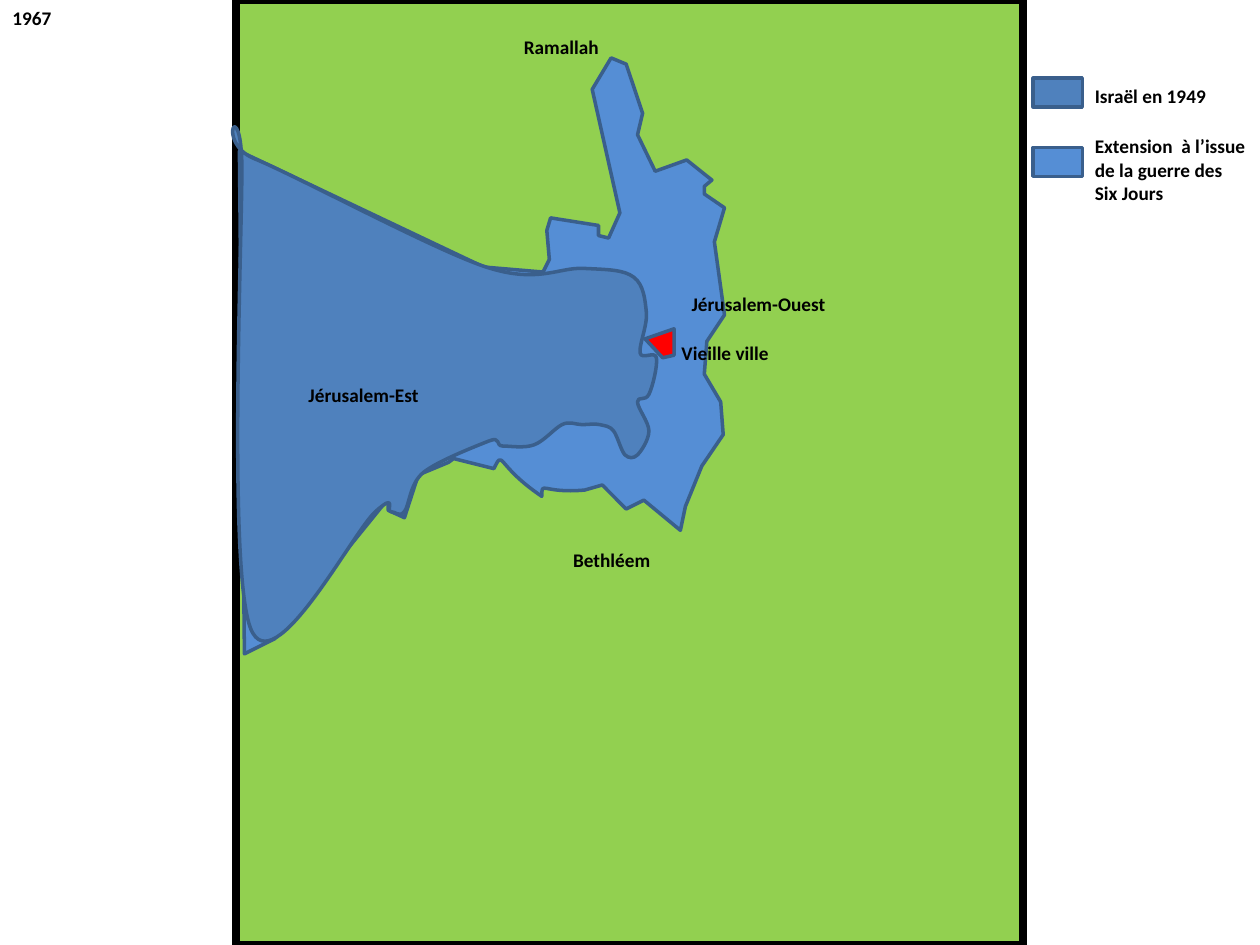
"""Map of Jerusalem in 1967 on a 1000 by 750 grid: regions are named stretches of border, curves follow one spline rule."""
from dataclasses import dataclass

from pptx import Presentation
from pptx.dml.color import RGBColor
from pptx.enum.shapes import MSO_SHAPE
from pptx.enum.text import MSO_AUTO_SIZE
from pptx.oxml.ns import qn
from pptx.util import Inches, Pt


@dataclass(frozen=True)
class Theme:
    font: str = "Calibri"
    text_size: float = 11
    text: str = "000000"
    frame: str = "000000"
    land: str = "92D050"
    israel: str = "4F81BD"
    extension: str = "558ED5"
    old_city: str = "FF0000"
    border: str = "3A5F8C"
    border_width: float = 2
    frame_width: float = 4.5


def paint(shape, fill, line, width):
    shape.shadow.inherit = False
    shape.fill.solid()
    shape.fill.fore_color.rgb = RGBColor.from_string(fill)
    shape.line.color.rgb = RGBColor.from_string(line)
    shape.line.width = Pt(width)


def draw_region(shapes, start, steps, unit):
    """Close an outline of steps: [end] is a line, [control, control, end] a curve."""
    builder = shapes.build_freeform(*start, scale=unit)
    builder.add_line_segments([point for step in steps for point in step], close=True)
    region = builder.convert_to_shape()
    segments = iter(list(region.element.iter(qn("a:lnTo"))))
    for step in steps:
        segment = next(segments)
        if len(step) == 3:
            segment.tag = qn("a:cubicBezTo")
            for _ in range(2):
                extra = next(segments)
                segment.append(extra[0])
                extra.getparent().remove(extra)
    return region


theme = Theme()
deck = Presentation()
deck.slide_width, deck.slide_height = Inches(10), Inches(7.5)
column, row = deck.slide_width // 1000, deck.slide_height // 750
page = deck.slides.add_slide(deck.slide_layouts[6])
shapes = page.shapes

land = shapes.add_shape(MSO_SHAPE.RECTANGLE, 187 * column, 0, 625 * column, 750 * row)
paint(land, theme.land, theme.frame, theme.frame_width)

# Extension: straight borders, clockwise, with one curved stretch in the south.
north_west_notch = [(431, 216), (436, 206), (434, 183), (437, 173), (475, 179), (475, 187), (483, 189)]
ramallah_corridor = [(492, 169), (470, 71), (485, 46), (497, 51), (510, 90), (506, 107), (520, 136)]
north_east_corner = [(545, 127), (565, 143), (559, 148), (559, 154), (575, 165), (567, 192)]
east_side = [(575, 250), (561, 271), (559, 297), (572, 319), (574, 345), (557, 370)]
bethlehem_point = [(544, 402), (540, 421), (511, 397), (497, 404), (478, 385), (464, 389)]
southern_curve = [
    [(430, 392), (430, 381), (430, 394)],
    [(393, 369), (400, 356), (392, 372)],
]
south_west_notch = [(360, 364), (356, 367), (332, 377), (321, 411), (308, 405), (308, 396)]
western_tip = [(218, 507), (194, 519), (190, 120), (384, 212)]

before_curve = north_west_notch + ramallah_corridor + north_east_corner + east_side + bethlehem_point
after_curve = south_west_notch + western_tip
extension_steps = (
    [[point] for point in before_curve[1:]] + southern_curve + [[point] for point in after_curve]
)

old_city = [(512, 269), (526, 284), (535, 282), (535, 261)]
old_city_steps = [[point] for point in old_city[1:]]

# Israel: a closed spline whose handles are a sixth of the gap between neighbouring knots.
north_border = [(192, 134), (202, 126), (383, 211), (463, 213), (503, 220)]
city_line = [(513, 248), (508, 280), (521, 284), (515, 313), (506, 319), (515, 342), (506, 361), (496, 361)]
south_border = [(487, 342), (476, 337), (462, 337), (446, 337), (424, 353), (399, 354), (388, 350)]
south_west_border = [(336, 375), (321, 406), (310, 406), (298, 406), (199, 499)]
knots = north_border + city_line + south_border + south_west_border
handles = [
    ((after[0] - before[0]) / 6, (after[1] - before[1]) / 6)
    for before, after in zip(knots[-1:] + knots[:-1], knots[1:] + knots[:1])
]
israel_steps = []
for index, (x, y) in enumerate(knots):
    following = (index + 1) % len(knots)
    (end_x, end_y), (out_x, out_y), (in_x, in_y) = knots[following], handles[index], handles[following]
    israel_steps.append([(x + out_x, y + out_y), (end_x - in_x, end_y - in_y), (end_x, end_y)])

for start, steps, fill in [
    (north_west_notch[0], extension_steps, theme.extension),
    (old_city[0], old_city_steps, theme.old_city),
    (knots[0], israel_steps, theme.israel),
]:
    region = draw_region(shapes, start, steps, column)
    paint(region, fill, theme.border, theme.border_width)

line_height, legend_left, legend_text_left, label_width = 29, 820, 859, 141
labels = [
    ("Ramallah", 406, 23, 86, line_height),
    ("Bethléem", 445, 430, 86, line_height),
    ("Vieille ville", 531, 266, 102, line_height),
    ("Jérusalem-Ouest", 539, 227, label_width, line_height),
    ("Jérusalem-Est", 235, 299, 117, line_height),
    ("1967", 0, 0, label_width, line_height),
]
for text, fill, swatch_top, text_top, text_height in [
    ("Israël en 1949", theme.israel, 62, 62, line_height),
    ("Extension  à l’issue de la guerre des Six Jours", theme.extension, 117, 102, 66),
]:
    swatch = shapes.add_shape(
        MSO_SHAPE.RECTANGLE, legend_left * column, swatch_top * row, 39 * column, 23 * row)
    paint(swatch, fill, theme.border, theme.border_width)
    labels.append((text, legend_text_left, text_top, label_width, text_height))

for text, left, top, width, height in labels:
    box = shapes.add_textbox(left * column, top * row, width * column, height * row)
    frame = box.text_frame
    frame.word_wrap = True
    frame.auto_size = MSO_AUTO_SIZE.SHAPE_TO_FIT_TEXT
    frame.text = text
    span = frame.paragraphs[0].runs[0]
    span.font.name = theme.font
    span.font.size = Pt(theme.text_size)
    span.font.bold = True
    span.font.color.rgb = RGBColor.from_string(theme.text)

deck.save("out.pptx")
